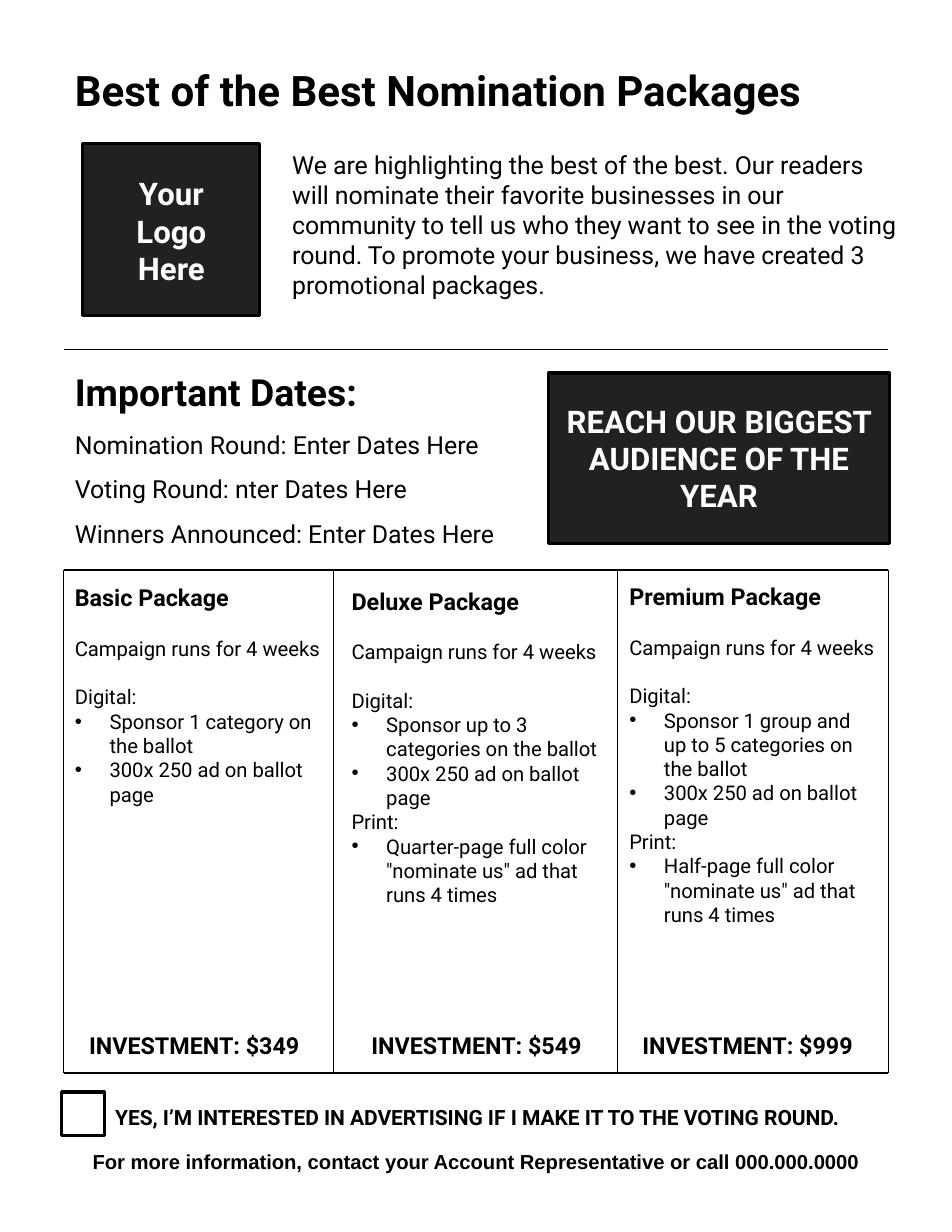
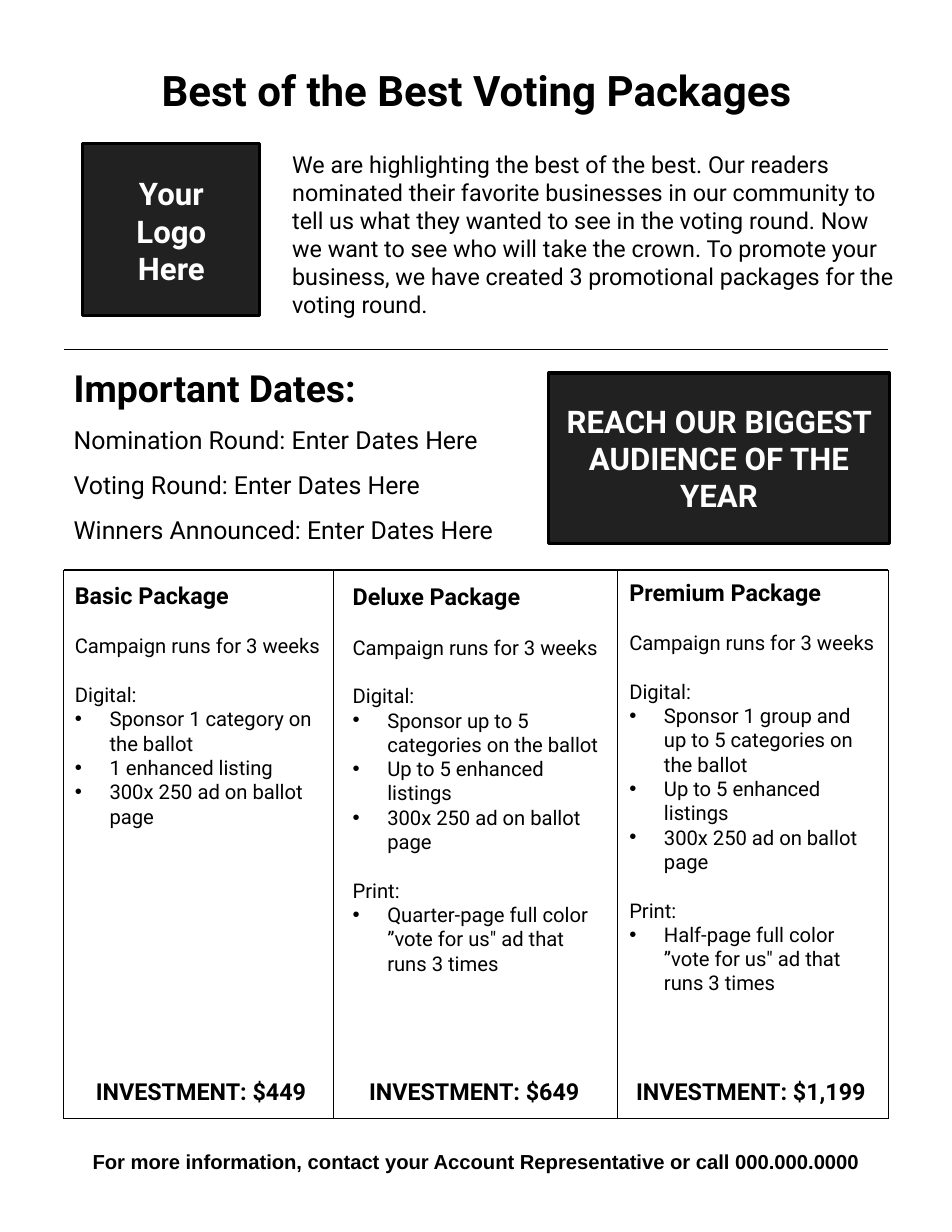
from dataclasses import dataclass

from lxml.etree import SubElement
from pptx import Presentation
from pptx.dml.color import RGBColor
from pptx.enum.shapes import MSO_CONNECTOR as Connector, MSO_SHAPE as Shape
from pptx.enum.text import MSO_ANCHOR as Anchor, PP_ALIGN as Align
from pptx.oxml.ns import qn
from pptx.util import Inches, Pt

COLORS = {"ink": "000000", "panel": "212121", "paper": "FFFFFF"}
BODY_FONT, CONTACT_FONT = "Roboto", "Arial"
LEFT, RIGHT = 0.57, 7.93
WIDTH = 7.37
COLUMN_WIDTH = 2.41
TABLE_TOP = 5.09
COLUMN_EDGES = (LEFT, 2.98, 5.51, RIGHT)
INSET = 0.1
BLANK_LINE = 15.7


@dataclass
class Package:
    """One column of the offer, with its text and price positions."""

    name: str
    left: float
    top: float
    price: str
    price_left: float
    digital: tuple
    printed: tuple = ()


@dataclass
class Flyer:
    """The wording and placement that differ between the pages."""

    title: str
    title_align: Align
    intro: str
    intro_size: float
    dates_at: tuple
    voting_line: str
    weeks: int
    table_bottom: float
    price_top: float
    print_gap: float
    packages: tuple
    has_checkbox: bool = False


BASIC, DELUXE, PREMIUM = "Basic Package", "Deluxe Package", "Premium Package"
ONE_CATEGORY = "Sponsor 1 category on the ballot"
ONE_GROUP = "Sponsor 1 group and up to 5 categories on the ballot"
BALLOT_AD = "300x 250 ad on ballot page"
FIVE_LISTINGS = "Up to 5 enhanced listings"

NOMINATION = Flyer(
    title="Best of the Best Nomination Packages",
    title_align=Align.LEFT,
    intro="We are highlighting the best of the best. Our readers will nominate their "
    "favorite businesses in our community to tell us who they want to see in the "
    "voting round. To promote your business, we have created 3 promotional packages.",
    intro_size=16,
    dates_at=(0.57, 3.2),
    voting_line="Voting Round: nter Dates Here",
    weeks=4,
    table_bottom=9.58,
    price_top=9.11,
    print_gap=0,
    has_checkbox=True,
    packages=(
        Package(BASIC, 0.57, 5.11, "$349", 0.53, (ONE_CATEGORY, BALLOT_AD)),
        Package(DELUXE, 3.04, 5.14, "$549", 3.05,
                ("Sponsor up to 3 categories on the ballot", BALLOT_AD),
                ('Quarter-page full color "nominate us" ad that runs 4 times',)),
        Package(PREMIUM, 5.52, 5.1, "$999", 5.47, (ONE_GROUP, BALLOT_AD),
                ('Half-page full color "nominate us" ad that runs 4 times',)),
    ),
)

VOTING = Flyer(
    title="Best of the Best Voting Packages",
    title_align=Align.CENTER,
    intro="We are highlighting the best of the best. Our readers nominated their "
    "favorite businesses in our community to tell us what they wanted to see in the "
    "voting round. Now we want to see who will take the crown. To promote your "
    "business, we have created 3 promotional packages for the voting round.",
    intro_size=15,
    dates_at=(0.56, 3.16),
    voting_line="Voting Round: Enter Dates Here",
    weeks=3,
    table_bottom=9.99,
    price_top=9.52,
    print_gap=BLANK_LINE,
    packages=(
        Package(BASIC, 0.57, 5.09, "$449", 0.59,
                (ONE_CATEGORY, "1 enhanced listing", BALLOT_AD)),
        Package(DELUXE, 3.05, 5.1, "$649", 3.03,
                ("Sponsor up to 5 categories on the ballot", FIVE_LISTINGS, BALLOT_AD),
                ('Quarter-page full color ”vote for us" ad that runs 3 times',)),
        Package(PREMIUM, 5.52, 5.06, "$1,199", 5.5,
                (ONE_GROUP, FIVE_LISTINGS, BALLOT_AD),
                ('Half-page full color ”vote for us" ad that runs 3 times',)),
    ),
)


def rgb(name):
    """Return the named colour."""
    return RGBColor.from_string(COLORS[name])


def add_box(page, left, top, width, height):
    """Add an empty wrapping text box and return its frame."""
    frame = page.shapes.add_textbox(*map(Inches, (left, top, width, height))).text_frame
    frame.word_wrap = True
    frame.vertical_anchor = Anchor.TOP
    frame.margin_left = frame.margin_right = Inches(INSET)
    frame.margin_top = frame.margin_bottom = Inches(INSET)
    return frame


def add_bullet(para):
    """Give a paragraph a hanging round bullet."""
    props = para._p.get_or_add_pPr()
    props.set("marL", str(Inches(0.31)))
    props.set("indent", str(-Inches(0.31)))
    SubElement(SubElement(props, qn("a:buClr")), qn("a:srgbClr"), val=COLORS["ink"])
    SubElement(props, qn("a:buFont"), typeface="Arial")
    SubElement(props, qn("a:buChar"), char="•")


def write(frame, text, size=13, bold=False, color="ink", font=BODY_FONT,
          align=Align.LEFT, before=0, spacing=None, bullet=False):
    """Write one formatted paragraph at the end of a frame."""
    first = frame.paragraphs[0]
    para = frame.add_paragraph() if first.runs else first
    if bullet:
        add_bullet(para)
    para.alignment = align
    if before:
        para.space_before = Pt(before)
    if spacing:
        para.line_spacing = spacing
    span = para.add_run()
    span.text = text
    span.font.name = font
    span.font.size = Pt(size)
    span.font.bold = bold
    span.font.color.rgb = rgb(color)


def add_panel(page, left, top, width, height, fill="panel"):
    """Add a filled rectangle with a dark outline."""
    panel = page.shapes.add_shape(
        Shape.RECTANGLE, *map(Inches, (left, top, width, height)))
    panel.shadow.inherit = False
    panel.fill.solid()
    panel.fill.fore_color.rgb = rgb(fill)
    panel.line.color.rgb = rgb("ink")
    panel.line.width = Pt(2)


def add_rule(page, x1, y1, x2, y2):
    """Add a thin straight line."""
    rule = page.shapes.add_connector(
        Connector.STRAIGHT, *map(Inches, (x1, y1, x2, y2)))
    rule.line.color.rgb = rgb("ink")
    rule.line.width = Pt(0.75)
    SubElement(rule._element.spPr, qn("a:effectLst"))


def add_header(page, flyer):
    """Add the title, the introduction and the logo place."""
    write(add_box(page, LEFT, 0.48, WIDTH, 0.67), flyer.title,
          size=27, bold=True, align=flyer.title_align)
    write(add_box(page, 2.51, 1.24, 5.65, 1.62), flyer.intro, size=flyer.intro_size)
    add_panel(page, 0.74, 1.28, 1.58, 1.54)
    logo = add_box(page, 0.67, 1.46, 1.72, 1.41)
    for word in ("Your", "Logo", "Here"):
        write(logo, word, size=20, bold=True, color="paper", align=Align.CENTER)
    add_rule(page, LEFT, 3.12, RIGHT, 3.12)


def add_dates(page, flyer):
    """Add the important dates and the slogan beside them."""
    dates = add_box(page, *flyer.dates_at, 5.35, 1.52)
    write(dates, "Important Dates:", size=24, bold=True)
    for line in ("Nomination Round: Enter Dates Here", flyer.voting_line,
                 "Winners Announced: Enter Dates Here"):
        write(dates, line, size=16, spacing=1.5)
    add_panel(page, 4.9, 3.33, 3.04, 1.52)
    write(add_box(page, 4.9, 3.49, 3.04, 1.2), "REACH OUR BIGGEST AUDIENCE OF THE YEAR",
          size=20, bold=True, color="paper", align=Align.CENTER)


def add_grid(page, bottom):
    """Draw the frame and dividers of the package columns."""
    for y in (TABLE_TOP, bottom):
        add_rule(page, LEFT, y, RIGHT, y)
    for x in COLUMN_EDGES:
        add_rule(page, x, TABLE_TOP, x, bottom)


def add_package(page, flyer, package):
    """Add the contents and the price of one package."""
    offer = add_box(page, package.left, package.top, COLUMN_WIDTH, 4.46)
    write(offer, package.name, size=15, bold=True)
    write(offer, f"Campaign runs for {flyer.weeks} weeks", before=BLANK_LINE)
    for heading, items, gap in (("Digital:", package.digital, BLANK_LINE),
                                ("Print:", package.printed, flyer.print_gap)):
        if items:
            write(offer, heading, before=gap)
        for item in items:
            write(offer, item, bullet=True)
    write(add_box(page, package.price_left, flyer.price_top, COLUMN_WIDTH, 0.4),
          f"INVESTMENT: {package.price}", size=15, bold=True, align=Align.CENTER)


def add_checkbox(page):
    """Add the tick box and its statement of interest."""
    write(add_box(page, 0.93, 9.76, WIDTH, 0.4),
          "YES, I’M INTERESTED IN ADVERTISING IF I MAKE IT TO THE VOTING ROUND.",
          size=13.5, bold=True)
    add_panel(page, 0.55, 9.75, 0.38, 0.39, fill="paper")


def add_contact(page):
    """Add the contact line at the foot of the page."""
    write(add_box(page, 0.56, 10.16, WIDTH, 0.4),
          "For more information, contact your Account Representative or call 000.000.0000",
          bold=True, font=CONTACT_FONT, align=Align.CENTER)


def add_flyer(deck, flyer):
    """Add one complete flyer page."""
    page = deck.slides.add_slide(deck.slide_layouts[6])
    add_header(page, flyer)
    add_dates(page, flyer)
    add_grid(page, flyer.table_bottom)
    for package in flyer.packages:
        add_package(page, flyer, package)
    if flyer.has_checkbox:
        add_checkbox(page)
    add_contact(page)


def main():
    """Build and save the deck."""
    deck = Presentation()
    deck.slide_width, deck.slide_height = Inches(8.5), Inches(11)
    for flyer in (NOMINATION, VOTING):
        add_flyer(deck, flyer)
    deck.save("out.pptx")


if __name__ == "__main__":
    main()
